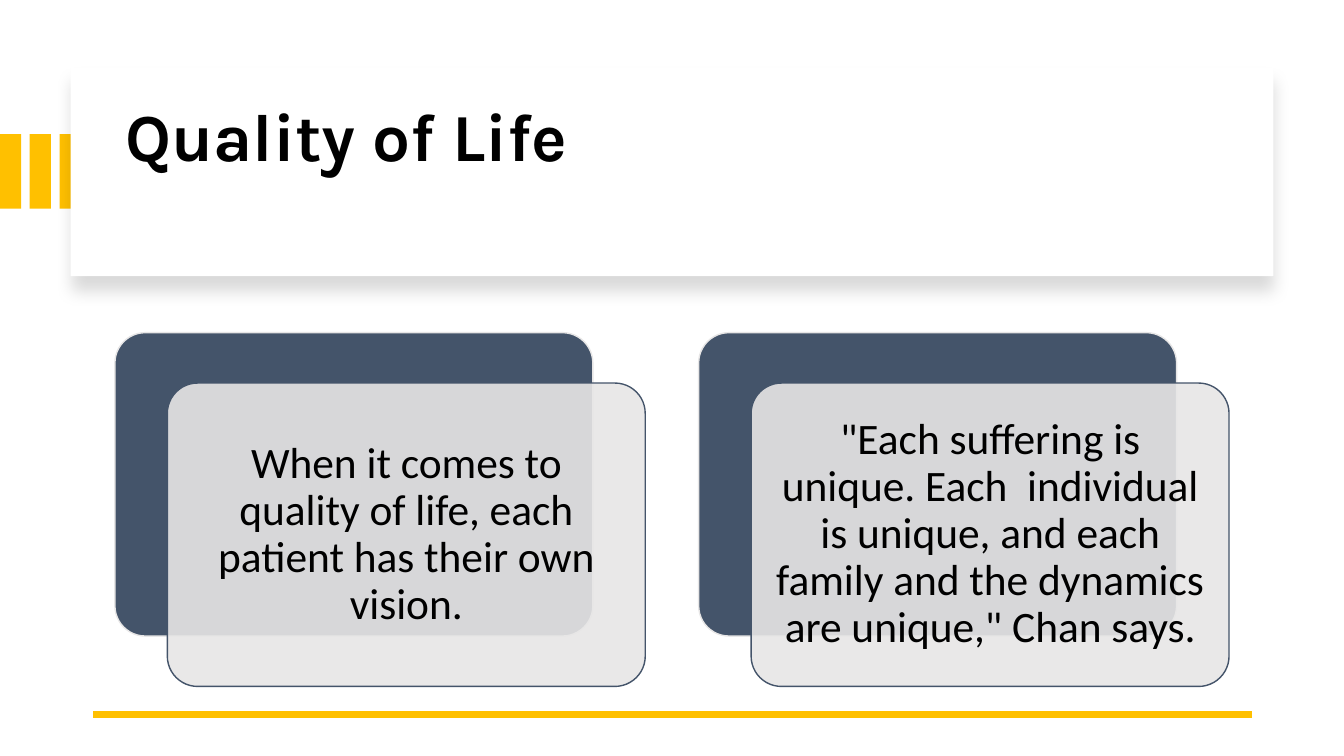
from dataclasses import dataclass

import pptx
import pptx.dml.color
import pptx.enum.shapes
import pptx.enum.text
import pptx.oxml
import pptx.oxml.ns
import pptx.util
from pptx.util import Inches

SHAPE = pptx.enum.shapes.MSO_SHAPE
ALIGN = pptx.enum.text.PP_ALIGN
NAMESPACE = pptx.oxml.ns.nsdecls("a")


@dataclass(frozen=True)
class Theme:
    gold: str = "FFC000"
    slate: str = "44546A"
    mist: str = "E7E6E6"
    white: str = "FFFFFF"
    black: str = "000000"
    title_font: str = "Karla"
    body_font: str = "Calibri"
    title_size: int = 48
    body_size: int = 31


THEME = Theme()
STATEMENTS = [
    "When it comes to quality of life, each patient has their own vision.",
    '"Each suffering is unique. Each  individual is unique, '
    'and each family and the dynamics are unique," Chan says.',
]


def rgb(color):
    return pptx.dml.color.RGBColor.from_string(color)


def add_box(shapes, kind, left, top, width, height, fill, line=None):
    shape = shapes.add_shape(kind, Inches(left), Inches(top), Inches(width), Inches(height))
    shape.shadow.inherit = False
    shape.fill.solid()
    shape.fill.fore_color.rgb = rgb(fill)
    if line:
        shape.line.color.rgb = rgb(line)
        shape.line.width = pptx.util.Pt(1)
    else:
        shape.line.fill.background()
    return shape


def write_text(shape, text, *, font, size, bold=False, align=ALIGN.LEFT, margins=(0.1, 0.05, 0.1, 0.05)):
    """Fill a shape with one paragraph; margins run left, top, right, bottom."""
    frame = shape.text_frame
    frame.word_wrap = True
    frame.auto_size = pptx.enum.text.MSO_AUTO_SIZE.NONE
    frame.vertical_anchor = pptx.enum.text.MSO_ANCHOR.MIDDLE
    frame.margin_left, frame.margin_top, frame.margin_right, frame.margin_bottom = map(Inches, margins)
    paragraph = frame.paragraphs[0]
    paragraph.alignment = align
    paragraph.line_spacing = 0.9
    run = paragraph.add_run()
    run.text = text
    run.font.name = font
    run.font.size = pptx.util.Pt(size)
    run.font.bold = bold
    run.font.color.rgb = rgb(THEME.black)


def add_stripes(slide, left, top, width, height, count=3, pitch=0.295):
    group = slide.shapes.add_group_shape()
    for index in range(count):
        add_box(group.shapes, SHAPE.RECTANGLE, left + index * pitch, top, width, height, THEME.gold)


def add_soft_shadow(shape):
    effects = shape.element.spPr.find(pptx.oxml.ns.qn("a:effectLst"))
    effects.append(pptx.oxml.parse_xml(
        f'<a:outerShdw {NAMESPACE} blurRad="139700" dist="127000" dir="5400000" algn="t" rotWithShape="0">'
        f'<a:srgbClr val="{THEME.black}"><a:alpha val="15000"/></a:srgbClr></a:outerShdw>'))


def add_title_panel(slide, left, top, width, height):
    panel = add_box(slide.shapes, SHAPE.RECTANGLE, left, top, width, height, THEME.white)
    add_soft_shadow(panel)
    title = slide.shapes.title
    title.left, title.top = Inches(left + 0.44), Inches(top + 0.22)
    title.width, title.height = Inches(width - 0.8), Inches(height - 0.37)
    write_text(title, "Quality of Life", font=THEME.title_font, size=THEME.title_size,
               bold=True, margins=(0.1, 0.05, 0.1, 0.75))
    panel.element.addnext(title.element)  # the title sits in front of its panel


def add_statement_card(group, left, top, width, height, text):
    """Draw a slate card with a translucent card, holding the text, set off from it."""
    back = add_box(group.shapes, SHAPE.ROUNDED_RECTANGLE, left, top, width, height, THEME.slate, THEME.mist)
    left, top, inset = left + 0.52, top + 0.5, 0.09
    front = add_box(group.shapes, SHAPE.ROUNDED_RECTANGLE, left, top, width, height, THEME.mist, THEME.slate)
    back.adjustments[0] = front.adjustments[0] = 0.1
    color = front.element.spPr.find(".//" + pptx.oxml.ns.qn("a:srgbClr"))
    color.append(pptx.oxml.parse_xml(f'<a:alpha {NAMESPACE} val="90000"/>'))
    label = group.shapes.add_textbox(Inches(left + inset), Inches(top + inset),
                                     Inches(width - 2 * inset), Inches(height - 2 * inset))
    write_text(label, text, font=THEME.body_font, size=THEME.body_size,
               align=ALIGN.CENTER, margins=(0.13,) * 4)


def add_statements(slide, left, top, width, height, pitch=5.79):
    group = slide.shapes.add_group_shape()
    for index, text in enumerate(STATEMENTS):
        add_statement_card(group, left + index * pitch, top, width, height, text)


def add_rule(slide, left, top, width):
    rule = slide.shapes.add_connector(pptx.enum.shapes.MSO_CONNECTOR.STRAIGHT, Inches(left + width),
                                      Inches(top), Inches(left), Inches(top))
    rule.line.color.rgb = rgb(THEME.gold)
    rule.line.width = pptx.util.Pt(4.5)
    rule.element.spPr.append(pptx.oxml.parse_xml(f"<a:effectLst {NAMESPACE}/>"))


def main():
    presentation = pptx.Presentation()
    presentation.slide_width, presentation.slide_height = Inches(13.33), Inches(7.5)
    slide = presentation.slides.add_slide(presentation.slide_layouts.get_by_name("Title Only"))
    slide.background.fill.solid()
    slide.background.fill.fore_color.rgb = rgb(THEME.white)
    add_stripes(slide, 0, 1.33, 0.21, 0.74)
    add_title_panel(slide, 0.7, 0.67, 11.93, 2.07)
    add_rule(slide, 0.92, 7.09, 11.5)
    add_statements(slide, 1.14, 3.3, 4.74, 3.01)
    presentation.save("out.pptx")


if __name__ == "__main__":
    main()
